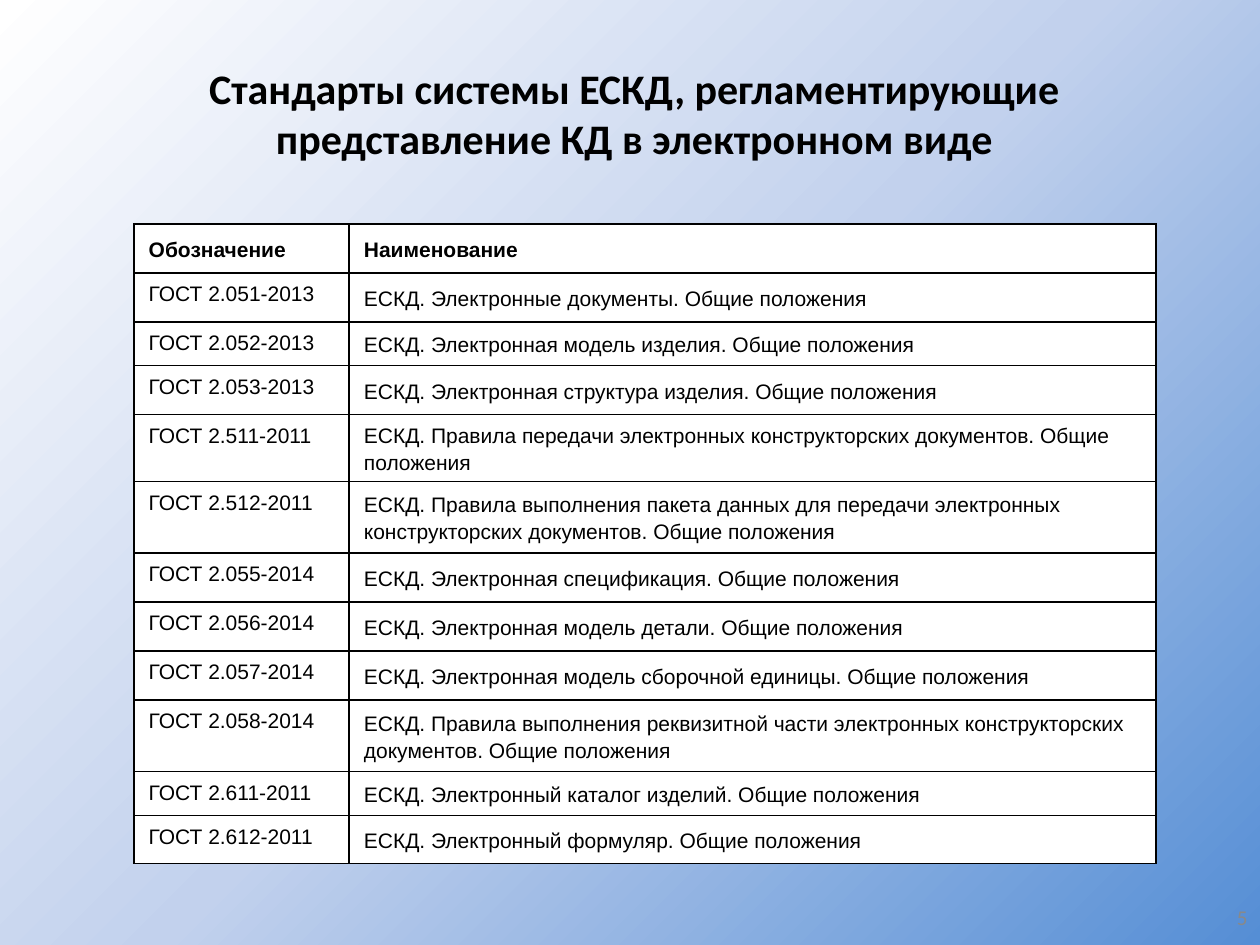
import copy
from dataclasses import dataclass

import lxml.etree
import pptx
import pptx.dml.color
import pptx.enum.text
import pptx.oxml.ns
import pptx.util

Pt = pptx.util.Pt
Anchor = pptx.enum.text.MSO_ANCHOR
Align = pptx.enum.text.PP_ALIGN
qn = pptx.oxml.ns.qn


@dataclass
class Standard:
    code: str
    name: str
    height: float = 28


HEADER = Standard("Обозначение", "Наименование")
STANDARDS = [
    Standard("ГОСТ 2.051-2013", "ЕСКД. Электронные документы. Общие положения"),
    Standard("ГОСТ 2.052-2013", "ЕСКД. Электронная модель изделия. Общие положения", 25),
    Standard("ГОСТ 2.053-2013", "ЕСКД. Электронная структура изделия. Общие положения"),
    Standard("ГОСТ 2.511-2011", "ЕСКД. Правила передачи электронных конструкторских "
             "документов. Общие положения"),
    Standard("ГОСТ 2.512-2011", "ЕСКД. Правила выполнения пакета данных для передачи "
             "электронных конструкторских документов. Общие положения", 41),
    Standard("ГОСТ 2.055-2014", "ЕСКД. Электронная спецификация. Общие положения"),
    Standard("ГОСТ 2.056-2014", "ЕСКД. Электронная модель детали. Общие положения"),
    Standard("ГОСТ 2.057-2014", "ЕСКД. Электронная модель сборочной единицы. Общие положения"),
    Standard("ГОСТ 2.058-2014", "ЕСКД. Правила выполнения реквизитной части электронных "
             "конструкторских документов. Общие положения", 41),
    Standard("ГОСТ 2.611-2011", "ЕСКД. Электронный каталог изделий. Общие положения", 25),
    Standard("ГОСТ 2.612-2011", "ЕСКД. Электронный формуляр. Общие положения", 27.4),
]
COLUMN_WIDTHS = (123, 461)
GRADIENT = ((0, "558ED5"), (0.5, "C2D1ED"), (1, "FFFFFF"))


def rgb(value: str) -> pptx.dml.color.RGBColor:
    return pptx.dml.color.RGBColor.from_string(value)


def set_font(p, name: str, size: float, color: str, bold: bool = False) -> None:
    p.font.name = name
    p.font.size = Pt(size)
    p.font.color.rgb = rgb(color)
    p.font.bold = bold


def set_background(s) -> None:
    fill = s.background.fill
    fill.gradient()
    fill.gradient_angle = 135
    stops = s.element.find(".//" + qn("a:gsLst"))
    stops.append(copy.deepcopy(stops[0]))
    for stop, (position, color) in zip(fill.gradient_stops, GRADIENT):
        stop.position = position
        stop.color.rgb = rgb(color)


def add_title(s, text: str) -> None:
    sp = s.shapes.title
    sp.left, sp.top, sp.width, sp.height = Pt(70.5), Pt(32), Pt(584), Pt(65.5)
    tf = sp.text_frame
    tf.text = text
    tf.word_wrap = True
    tf.auto_size = pptx.enum.text.MSO_AUTO_SIZE.NONE
    tf.vertical_anchor = Anchor.TOP
    p = tf.paragraphs[0]
    p.alignment = Align.CENTER
    set_font(p, "Calibri", 24, "000000", True)


def add_page_number(s, text: str) -> None:
    tf = s.shapes.add_textbox(Pt(660), Pt(512), Pt(60), Pt(24)).text_frame
    tf.word_wrap = True
    tf.vertical_anchor = Anchor.MIDDLE
    p = tf.paragraphs[0]
    p.text = text
    p.alignment = Align.RIGHT
    set_font(p, "Calibri", 12, "898989")


def add_borders(cell, color: str, width: float) -> None:
    tc_pr = cell._tc.get_or_add_tcPr()
    for i, side in enumerate(("lnL", "lnR", "lnT", "lnB")):
        ln = lxml.etree.Element(qn("a:" + side), w=str(Pt(width)))
        fill = lxml.etree.SubElement(ln, qn("a:solidFill"))
        lxml.etree.SubElement(fill, qn("a:srgbClr"), val=color)
        tc_pr.insert(i, ln)


def fill_cell(cell, text: str, bold: bool, anchor) -> None:
    cell.fill.solid()
    cell.fill.fore_color.rgb = rgb("FFFFFF")
    cell.margin_left = cell.margin_right = Pt(8.5)
    cell.margin_top = cell.margin_bottom = Pt(3.6)
    cell.vertical_anchor = anchor
    p = cell.text_frame.paragraphs[0]
    p.text = text
    p.line_spacing = 1.15
    set_font(p, "Arial", 12, "000000", bold)
    add_borders(cell, "000000", 1)


def add_standards_table(s, rows: list[Standard]) -> None:
    table = s.shapes.add_table(len(rows), len(COLUMN_WIDTHS), Pt(76.5), Pt(128),
                               Pt(sum(COLUMN_WIDTHS)), Pt(370)).table
    table.first_row = table.horz_banding = False
    for column, width in zip(table.columns, COLUMN_WIDTHS):
        column.width = Pt(width)
    for i, row in enumerate(rows):
        header = row is HEADER
        table.rows[i].height = Pt(row.height)
        fill_cell(table.cell(i, 0), row.code, header, Anchor.MIDDLE if header else Anchor.TOP)
        fill_cell(table.cell(i, 1), row.name, header, Anchor.MIDDLE)


def main() -> None:
    prs = pptx.Presentation()
    prs.slide_width, prs.slide_height = Pt(720), Pt(540)
    s = prs.slides.add_slide(prs.slide_layouts[5])
    set_background(s)
    add_standards_table(s, [HEADER, *STANDARDS])
    add_title(s, "Стандарты системы ЕСКД, регламентирующие представление КД в электронном виде")
    add_page_number(s, "5")
    prs.save("out.pptx")


if __name__ == "__main__":
    main()
